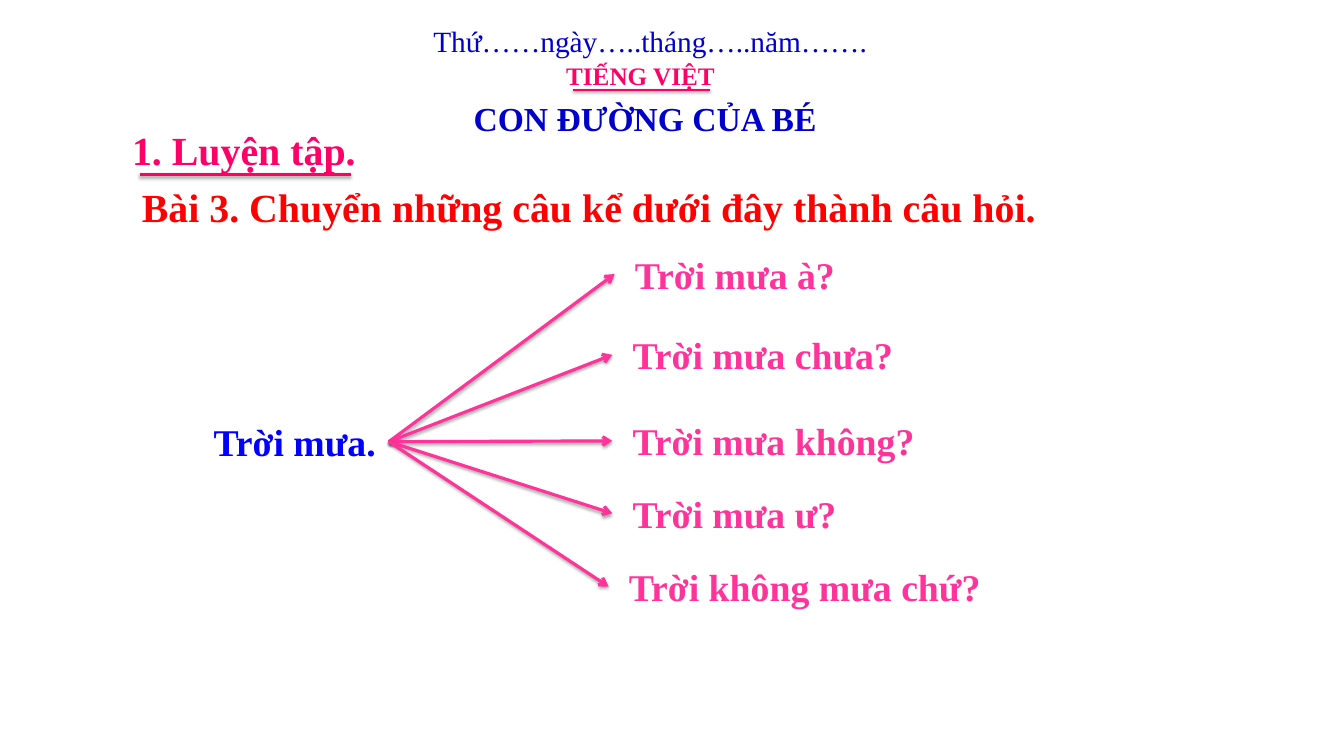
from lxml import etree
from pptx import Presentation
from pptx.dml.color import RGBColor
from pptx.enum import shapes, text
from pptx.oxml import ns
from pptx.util import Inches, Pt

FONT = "Times New Roman"
COLORS = {
    "navy": "0000CC",
    "blue": "0000FF",
    "rose": "FF0066",
    "red": "FF0000",
    "pink": "FF3399",
    "shadow": "000000",
}
ANSWERS = [
    ("Trời mưa à?", 8.31, 3.28, 2.88),
    ("Trời mưa chưa?", 8.28, 4.35, 3.69),
    ("Trời mưa không?", 8.28, 5.49, 3.97),
    ("Trời mưa ư?", 8.28, 6.45, 2.93),
    ("Trời không mưa chứ?", 8.23, 7.42, 4.91),
]


def format_text(s, words, size, color, bold=True, wrap=False, align=text.PP_ALIGN.LEFT):
    tf = s.text_frame
    tf.text = words
    tf.word_wrap = wrap
    tf.auto_size = text.MSO_AUTO_SIZE.SHAPE_TO_FIT_TEXT
    tf.vertical_anchor = text.MSO_ANCHOR.TOP
    p = tf.paragraphs[0]
    p.alignment = align
    r = p.runs[0]
    r.font.name = FONT
    r.font.size = Pt(size)
    r.font.bold = bold
    r.font.color.rgb = RGBColor.from_string(COLORS[color])
    return p


def add_text(slide, box, words, size, color, **options):
    s = slide.shapes.add_textbox(*map(Inches, box))
    return format_text(s, words, size, color, **options)


def set_title(slide, box, words, size, color):
    s = slide.shapes.title
    s.left, s.top, s.width, s.height = map(Inches, box)
    format_text(s, words, size, color, align=text.PP_ALIGN.CENTER)


def add_shadow(s, distance, opacity):
    effects = etree.SubElement(s._element.spPr, ns.qn("a:effectLst"))
    shadow = etree.SubElement(
        effects, ns.qn("a:outerShdw"), blurRad=str(Pt(3.1)), dist=str(Pt(distance)),
        dir="5400000", rotWithShape="0")
    color = etree.SubElement(shadow, ns.qn("a:srgbClr"), val=COLORS["shadow"])
    etree.SubElement(color, ns.qn("a:alpha"), val=str(opacity * 1000))


def add_line(slide, start, end, color, width=3, arrow=False, distance=1.8, opacity=35):
    s = slide.shapes.add_connector(
        shapes.MSO_CONNECTOR.STRAIGHT, *map(Inches, start + end))
    s.line.color.rgb = RGBColor.from_string(COLORS[color])
    s.line.width = Pt(width)
    if arrow:
        etree.SubElement(s.line._get_or_add_ln(), ns.qn("a:tailEnd"), type="arrow")
    add_shadow(s, distance, opacity)


def add_heading(slide):
    add_text(slide, (5.64, 0.26, 6.01, 0.57), "Thứ……ngày…..tháng…..năm…….",
             28, "navy", bold=False)
    add_text(slide, (7.4, 0.75, 2.19, 0.5), "TIẾNG VIỆT", 24, "rose")
    add_line(slide, (7.59, 1.19), (9.4, 1.19), "rose", width=2, distance=1.6, opacity=38)
    set_title(slide, (6.15, 1.25, 4.79, 0.64), "CON ĐƯỜNG CỦA BÉ", 32, "navy")


def add_exercise(slide):
    add_text(slide, (1.65, 1.62, 4.58, 0.74), "1. Luyện tập.", 38, "rose", wrap=True)
    add_line(slide, (1.85, 2.31), (4.65, 2.31), "rose")
    p = add_text(slide, (0.98, 2.37, 15.94, 0.74),
                 "Bài 3. Chuyển những câu kể dưới đây thành câu hỏi.",
                 38, "red", wrap=True, align=text.PP_ALIGN.JUSTIFY)
    p._p.get_or_add_pPr().set("indent", str(Inches(0.8)))


def add_answers(slide):
    add_text(slide, (2.73, 5.5, 2.42, 0.71), "Trời mưa.", 36, "blue",
             wrap=True, align=text.PP_ALIGN.JUSTIFY)
    for words, left, top, width in ANSWERS:
        add_line(slide, (5.15, 5.85), (left - 0.17, top + 0.35), "pink", arrow=True)
        add_text(slide, (left, top, width, 0.71), words, 36, "pink")


def main():
    prs = Presentation()
    prs.slide_width, prs.slide_height = Inches(17.8), Inches(10)
    slide = prs.slides.add_slide(prs.slide_layouts.get_by_name("Title Only"))
    add_heading(slide)
    add_exercise(slide)
    add_answers(slide)
    prs.save("out.pptx")


if __name__ == "__main__":
    main()
